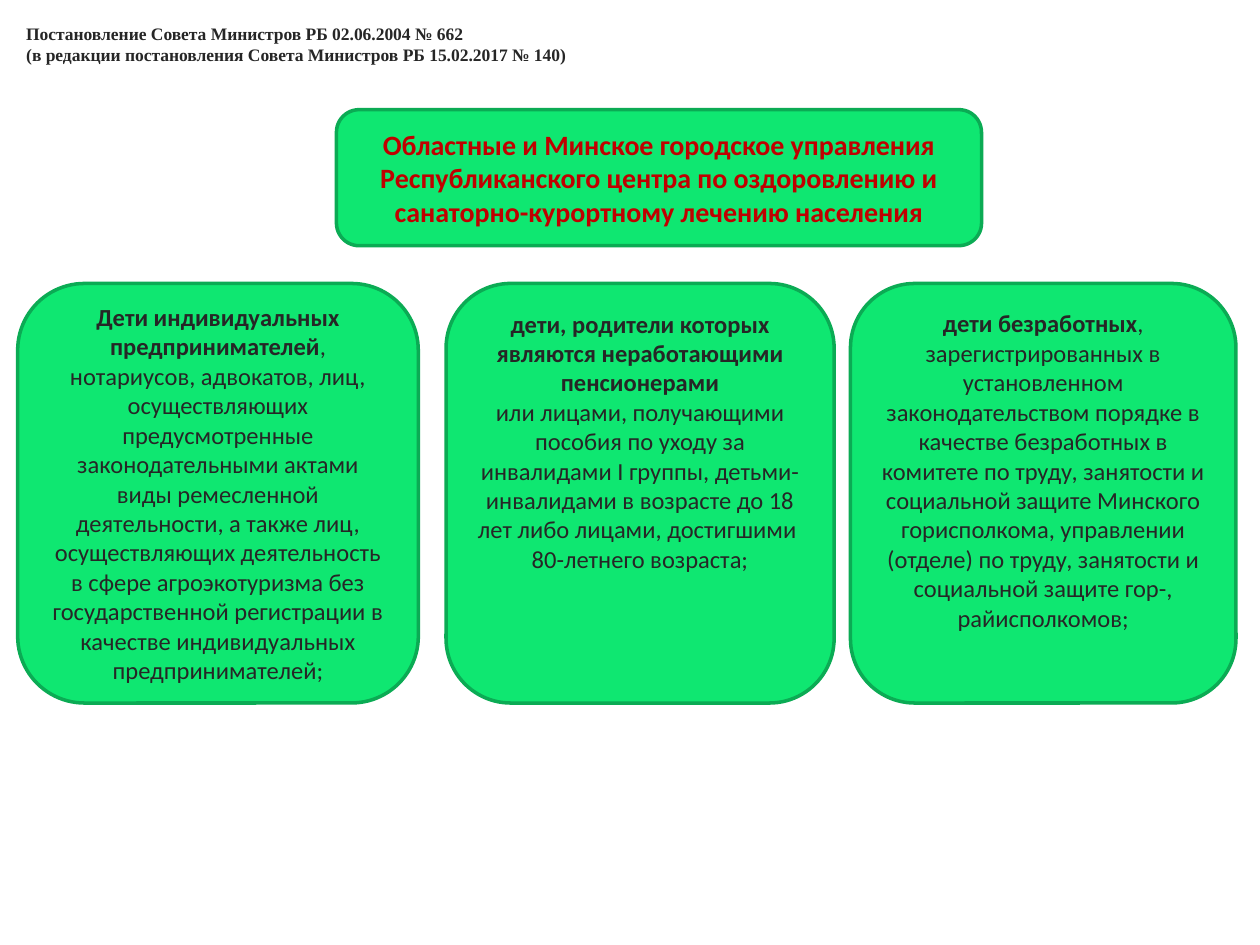
from pptx import Presentation
from pptx.dml.color import RGBColor
from pptx.enum.shapes import MSO_SHAPE
from pptx.enum.text import MSO_ANCHOR, PP_ALIGN
from pptx.util import Inches, Pt

COLORS = {"panel": "0FE771", "border": "0BAB54", "title": "C00000", "ink": "262626"}

# Grid: 100 columns by 75 rows, each cell a tenth of an inch
CELL = Inches(0.1)
COLUMNS, ROWS = 100, 75
CARD_TOP, CARD_HEIGHT = 22.5, 33.3

DECREE = [
    [("Постановление Совета Министров РБ ", True), ("02.06.2004 № 662", True)],
    [("(в редакции постановления Совета Министров РБ 15.02.2017 № 140)", True)],
]
OFFICE = [
    [("Областные и Минское городское управления Республиканского центра "
      "по оздоровлению и санаторно-курортному лечению населения", True)],
]
# Each card: left column, width in columns, anchor, paragraphs of (text, bold)
CARDS = [
    (1.4, 31.8, MSO_ANCHOR.MIDDLE, [
        [("Дети индивидуальных предпринимателей", True),
         (", нотариусов, адвокатов, лиц, осуществляющих предусмотренные "
          "законодательными актами виды ремесленной деятельности, а также лиц, "
          "осуществляющих деятельность в сфере агроэкотуризма без государственной "
          "регистрации в качестве индивидуальных предпринимателей;", False)],
    ]),
    (35.4, 30.8, MSO_ANCHOR.TOP, [
        [("дети, родители которых являются неработающими пенсионерами", True)],
        [("или лицами, получающими пособия по уходу за инвалидами I группы, "
          "детьми-инвалидами в возрасте до 18 лет либо лицами, достигшими ", False)],
        [("80-летнего возраста;", False)],
    ]),
    (67.5, 30.6, MSO_ANCHOR.TOP, [
        [("дети безработных", True),
         (", зарегистрированных в установленном законодательством порядке в качестве "
          "безработных в комитете по труду, занятости и социальной защите Минского "
          "горисполкома, управлении (отделе) по труду, занятости и социальной защите "
          "гор-, райисполкомов;", False)],
    ]),
]


def cells(*counts):
    return [round(count * CELL) for count in counts]


def write(frame, paragraphs, font, size, color, align):
    frame.word_wrap = True
    for index, spans in enumerate(paragraphs):
        para = frame.paragraphs[0] if index == 0 else frame.add_paragraph()
        para.alignment = align
        for text, bold in spans:
            span = para.add_run()
            span.text = text
            span.font.name = font
            span.font.size = Pt(size)
            span.font.bold = bold
            span.font.color.rgb = RGBColor.from_string(COLORS[color])


def add_decree(page, box):
    note = page.shapes.add_textbox(*cells(*box))
    write(note.text_frame, DECREE, "Times New Roman", 10, "ink", PP_ALIGN.LEFT)


def add_panel(page, box, paragraphs, size, color, anchor):
    panel = page.shapes.add_shape(MSO_SHAPE.ROUNDED_RECTANGLE, *cells(*box))
    panel.shadow.inherit = False
    panel.fill.solid()
    panel.fill.fore_color.rgb = RGBColor.from_string(COLORS["panel"])
    panel.line.color.rgb = RGBColor.from_string(COLORS["border"])
    panel.line.width = Pt(2)
    panel.text_frame.vertical_anchor = anchor
    write(panel.text_frame, paragraphs, "Calibri", size, color, PP_ALIGN.CENTER)


def add_cards(page, top, height):
    for left, width, anchor, paragraphs in CARDS:
        add_panel(page, (left, top, width, height), paragraphs, 14, "ink", anchor)


def main():
    deck = Presentation()
    deck.slide_width, deck.slide_height = cells(COLUMNS, ROWS)
    page = deck.slides.add_slide(deck.slide_layouts[6])

    # Responsible office
    add_panel(page, (26.7, 8.7, 51.2, 10.8), OFFICE, 16, "title", MSO_ANCHOR.MIDDLE)
    # Groups of children
    add_cards(page, CARD_TOP, CARD_HEIGHT)
    # Decree reference
    add_decree(page, (1.1, 1.3, 47, 7.4))

    deck.save("out.pptx")


if __name__ == "__main__":
    main()
